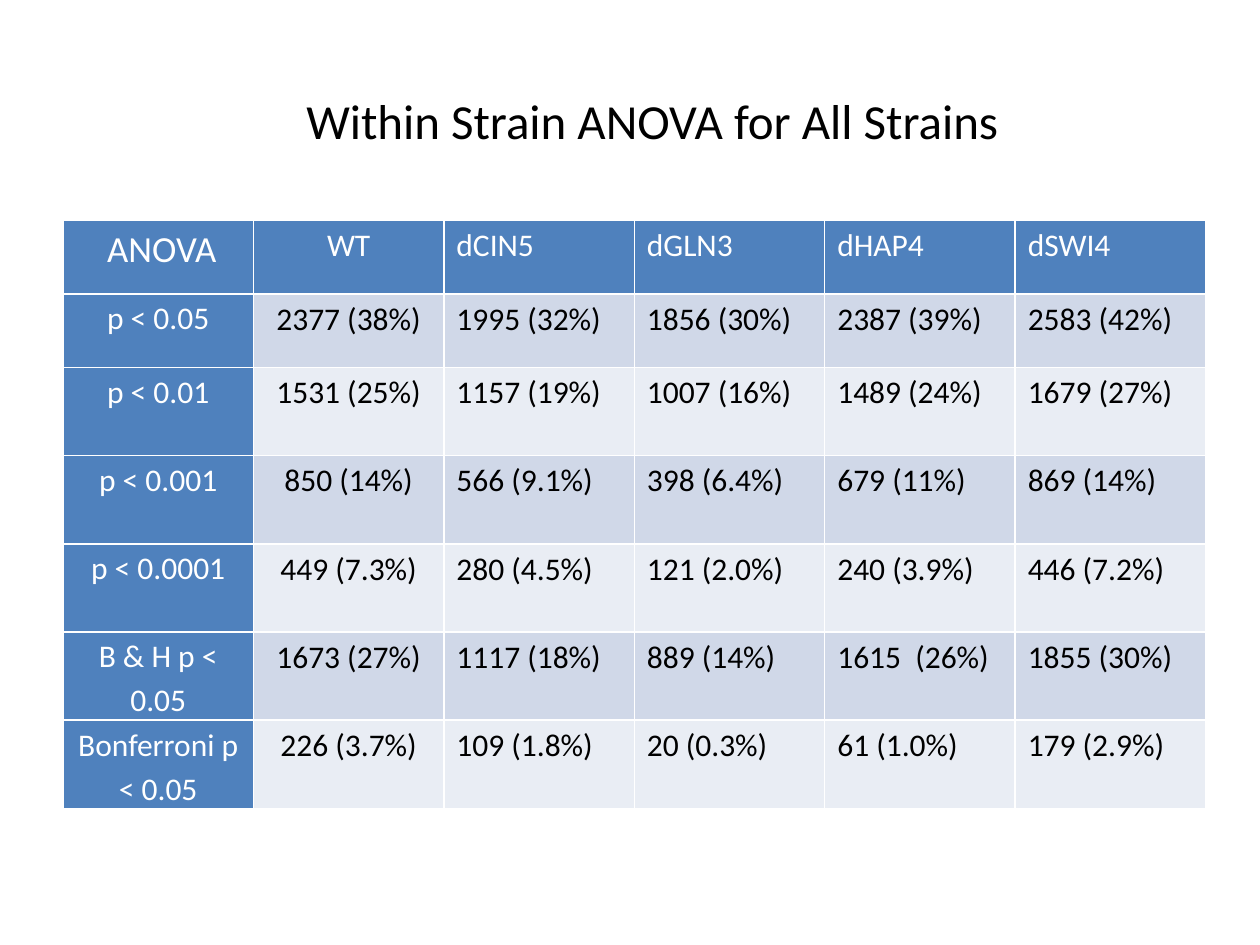
from dataclasses import dataclass

from lxml import etree
from pptx import Presentation
from pptx import util as u
from pptx.dml.color import RGBColor
from pptx.enum import text
from pptx.oxml import ns


@dataclass(frozen=True)
class Theme:
    font: str = "Calibri"
    title_size: float = 28
    corner_size: float = 21
    body_size: float = 18
    black: str = "000000"
    white: str = "FFFFFF"
    header: str = "4F81BD"
    bands: tuple[str, str] = ("D0D8E8", "E9EDF4")
    border: float = 1


@dataclass(frozen=True)
class Row:
    label: str
    values: tuple[str, ...]
    height: float


THEME = Theme()
COLUMN_WIDTH = 108.84
SHORT, TALL = 42, 50.4
ROWS = (
    Row("ANOVA", ("WT", "dCIN5", "dGLN3", "dHAP4", "dSWI4"), SHORT),
    Row("p < 0.05", ("2377 (38%)", "1995 (32%)", "1856 (30%)", "2387 (39%)", "2583 (42%)"), SHORT),
    Row("p < 0.01", ("1531 (25%)", "1157 (19%)", "1007 (16%)", "1489 (24%)", "1679 (27%)"), TALL),
    Row("p < 0.001", ("850 (14%)", "566 (9.1%)", "398 (6.4%)", "679 (11%)", "869 (14%)"), TALL),
    Row("p < 0.0001", ("449 (7.3%)", "280 (4.5%)", "121 (2.0%)", "240 (3.9%)", "446 (7.2%)"), TALL),
    Row("B & H p < 0.05", ("1673 (27%)", "1117 (18%)", "889 (14%)", "1615  (26%)", "1855 (30%)"), TALL),
    Row("Bonferroni p < 0.05", ("226 (3.7%)", "109 (1.8%)", "20 (0.3%)", "61 (1.0%)", "179 (2.9%)"), TALL),
)


def add_run(paragraph, wording: str, size: float, color: str) -> None:
    run = paragraph.add_run()
    run.text = wording
    run.font.name = THEME.font
    run.font.size = u.Pt(size)
    run.font.bold = False
    run.font.color.rgb = RGBColor.from_string(color)


def set_borders(cell) -> None:
    properties = cell._tc.get_or_add_tcPr()
    for index, side in enumerate(("lnL", "lnR", "lnT", "lnB")):
        line = etree.Element(ns.qn(f"a:{side}"), w=str(u.Pt(THEME.border)))
        fill = etree.SubElement(line, ns.qn("a:solidFill"))
        etree.SubElement(fill, ns.qn("a:srgbClr"), val=THEME.white)
        properties.insert(index, line)


def format_cell(cell, wording: str, row: int, column: int) -> None:
    is_heading = row == 0 or column == 0
    is_corner = row == 0 and column == 0
    fill = THEME.header if is_heading else THEME.bands[(row - 1) % 2]
    cell.fill.solid()
    cell.fill.fore_color.rgb = RGBColor.from_string(fill)
    set_borders(cell)
    paragraph = cell.text_frame.paragraphs[0]
    paragraph.alignment = text.PP_ALIGN.CENTER if column < 2 else text.PP_ALIGN.LEFT
    if column == 0 or (row == 0 and column == 1):
        cell.margin_left = cell.margin_right = u.Pt(5)
        cell.margin_top = cell.margin_bottom = u.Pt(0)
        paragraph.line_spacing = 1.15
    if is_corner:
        add_run(paragraph, " ", THEME.body_size, THEME.black)
    size = THEME.corner_size if is_corner else THEME.body_size
    add_run(paragraph, wording, size, THEME.white if is_heading else THEME.black)


def add_title(slide, wording: str) -> None:
    title = slide.shapes.title
    title.left, title.top = u.Pt(167.8), u.Pt(48)
    title.width, title.height = u.Pt(414.7), u.Pt(41.2)
    frame = title.text_frame
    frame.word_wrap = False
    frame.auto_size = text.MSO_AUTO_SIZE.SHAPE_TO_FIT_TEXT
    frame.vertical_anchor = text.MSO_ANCHOR.TOP
    paragraph = frame.paragraphs[0]
    paragraph.alignment = text.PP_ALIGN.LEFT
    add_run(paragraph, wording, THEME.title_size, THEME.black)


def add_anova_table(slide, rows: tuple[Row, ...]) -> None:
    columns = len(rows[0].values) + 1
    shape = slide.shapes.add_table(
        len(rows), columns, u.Pt(36), u.Pt(126),
        u.Pt(COLUMN_WIDTH * columns), u.Pt(sum(row.height for row in rows)),
    )
    table = shape.table
    for column in table.columns:
        column.width = u.Pt(COLUMN_WIDTH)
    for row_index, row in enumerate(rows):
        table.rows[row_index].height = u.Pt(row.height)
        for column_index, wording in enumerate((row.label, *row.values)):
            format_cell(table.cell(row_index, column_index), wording, row_index, column_index)


def main() -> None:
    presentation = Presentation()
    presentation.slide_width = u.Pt(720)
    presentation.slide_height = u.Pt(540)
    slide = presentation.slides.add_slide(presentation.slide_layouts.get_by_name("Title Only"))
    add_title(slide, "Within Strain ANOVA for All Strains")
    add_anova_table(slide, ROWS)
    presentation.save("out.pptx")


if __name__ == "__main__":
    main()
